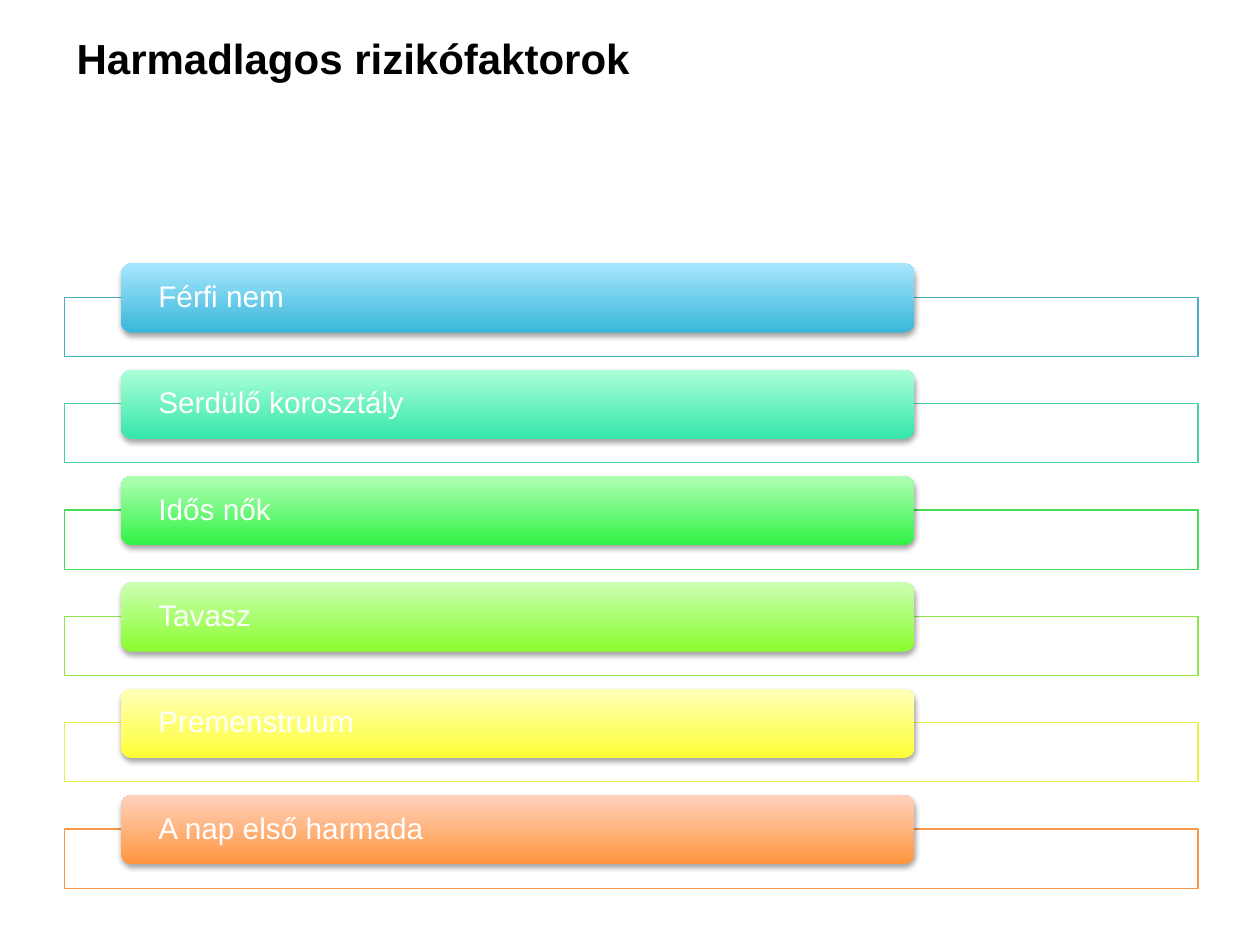
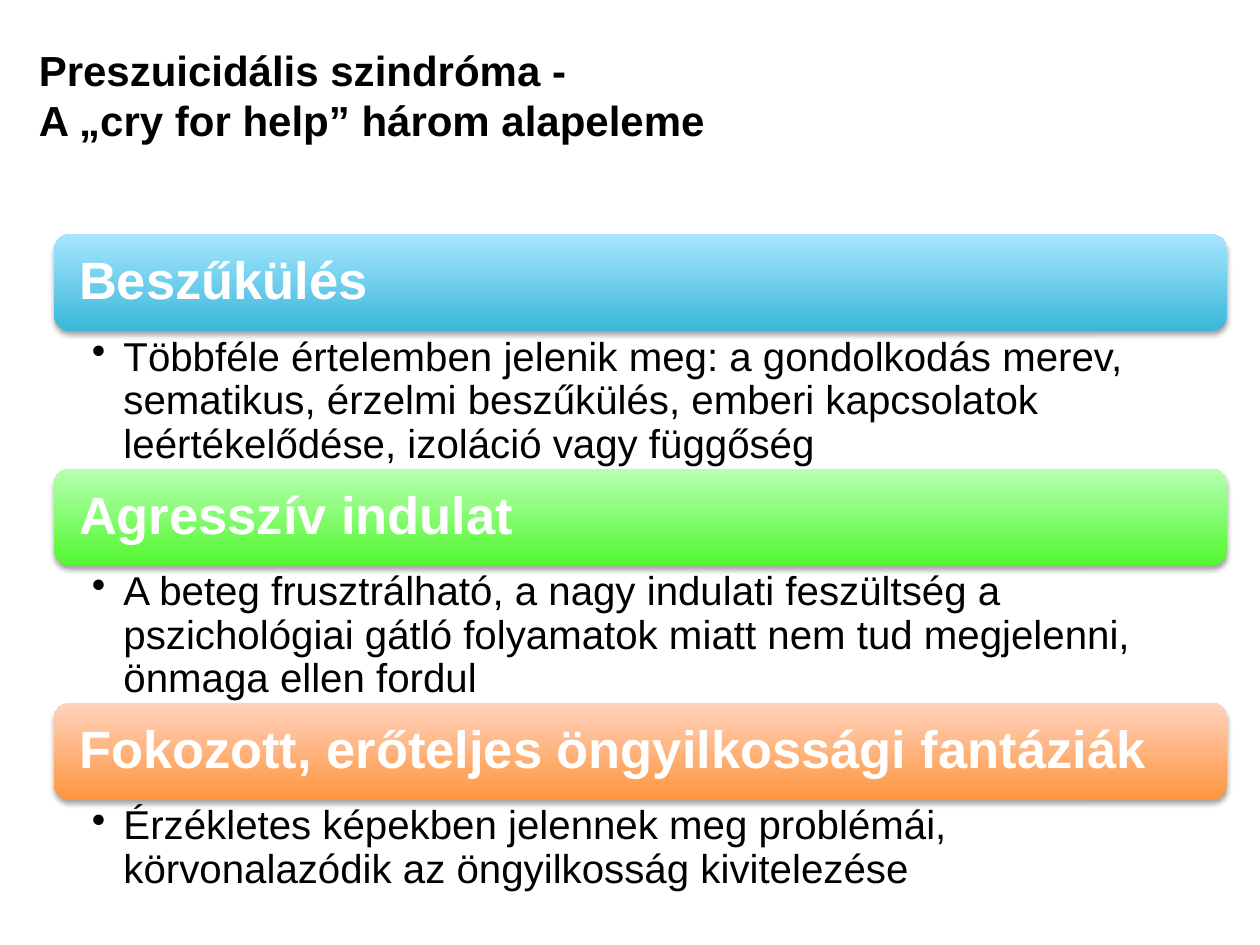
from lxml.etree import SubElement
from pptx import Presentation
from pptx.dml.color import RGBColor as RGB
from pptx.enum.shapes import MSO_SHAPE as Form
from pptx.enum.text import MSO_ANCHOR as Anchor, PP_ALIGN as Align
from pptx.oxml.ns import qn
from pptx.util import Inches, Pt

WIDE, HIGH = 10, 7.5
FONT = "Arial"
HEX = {"ink": "000000", "paper": "FFFFFF"}
TONES = {
    "blue": ("39B7D8", "A7E6FF", "4BACC6"),
    "mint": ("34E6A9", "ACFFD9", "49D1A3"),
    "green": ("31F245", "B0FFB4", "47DC57"),
    "leaf": ("51F82F", "B9FFB2", "47DC57"),
    "lime": ("8AFD2E", "CCFFB4", "8DE646"),
    "yellow": ("FEFF35", "FFFFB9", "EEEF46"),
    "orange": ("FF953E", "FFD2BD", "F79646"),
}

RISKS = {
    "title": "Harmadlagos rizikófaktorok",
    "rows": [
        ("Férfi nem", "blue"),
        ("Serdülő korosztály", "mint"),
        ("Idős nők", "green"),
        ("Tavasz", "lime"),
        ("Premenstruum", "yellow"),
        ("A nap első harmada", "orange"),
    ],
}
SIGNS = {
    "title": "Preszuicidális szindróma -\nA „cry for help” három alapeleme",
    "rows": [
        ("Beszűkülés", "blue",
         "Többféle értelemben jelenik meg: a gondolkodás merev, sematikus, "
         "érzelmi beszűkülés, emberi kapcsolatok leértékelődése, izoláció "
         "vagy függőség", 1.09),
        ("Agresszív indulat", "leaf",
         "A beteg frusztrálható, a nagy indulati feszültség a pszichológiai "
         "gátló folyamatok miatt nem tud megjelenni, önmaga ellen fordul",
         1.09),
        ("Fokozott, erőteljes öngyilkossági fantáziák", "orange",
         "Érzékletes képekben jelennek meg problémái, körvonalazódik az "
         "öngyilkosság kivitelezése", 0.75),
    ],
}


def write(shape, text, size, color="ink", bold=False, anchor=Anchor.TOP,
          pad=(0.1, 0.05, 0.1, 0.05), lead=0.9, bullet=False):
    frame = shape.text_frame
    frame.word_wrap = True
    frame.vertical_anchor = anchor
    (frame.margin_left, frame.margin_top,
     frame.margin_right, frame.margin_bottom) = map(Inches, pad)
    para = frame.paragraphs[0]
    para.text = text
    para.alignment = Align.LEFT
    para.line_spacing = lead
    if bullet:
        para.level = 1
        props = para._p.get_or_add_pPr()
        props.set("marL", str(Inches(0.25)))
        props.set("indent", str(Inches(-0.25)))
        SubElement(props, qn("a:buChar"), char="•")
    font = para.font
    font.name, font.size, font.bold = FONT, Pt(size), bold
    font.color.rgb = RGB.from_string(HEX[color])


def note(slide, box, text, size, **style):
    write(slide.shapes.add_textbox(*map(Inches, box)), text, size, **style)


def block(slide, form, box):
    shape = slide.shapes.add_shape(form, *map(Inches, box))
    shape.shadow.inherit = False
    return shape


def bar(slide, box, tone, text, size, **style):
    shape = block(slide, Form.ROUNDED_RECTANGLE, box)
    shape.fill.gradient()
    shape.fill.gradient_angle = 90
    for stop, shade in zip(shape.fill.gradient_stops, TONES[tone]):
        stop.color.rgb = RGB.from_string(shade)
    shape.line.fill.background()
    glow = SubElement(shape._element.spPr.find(qn("a:effectLst")),
                      qn("a:outerShdw"), blurRad=str(Pt(3.1)),
                      dist=str(Pt(1.8)), dir="5400000", rotWithShape="0")
    black = SubElement(glow, qn("a:srgbClr"), val=HEX["ink"])
    SubElement(black, qn("a:alpha"), val="35000")
    write(shape, text, size, color="paper", anchor=Anchor.MIDDLE, **style)


def tray(slide, box, tone):
    shape = block(slide, Form.RECTANGLE, box)
    shape.fill.solid()
    shape.fill.fore_color.rgb = RGB.from_string(HEX["paper"])
    paint = shape._element.spPr.find(qn("a:solidFill"))
    SubElement(paint[0], qn("a:alpha"), val="90000")
    shape.line.color.rgb = RGB.from_string(TONES[tone][2])
    shape.line.width = Pt(0.75)


def start(deck, title, left, top):
    slide = deck.slides.add_slide(deck.slide_layouts[6])
    note(slide, (left, top, 0.9 * WIDE, HIGH / 6), title, 24,
         bold=True, lead=1.0)
    return slide


def risks(deck):
    left, top, last, width = 0.51, 2.36, 6.58, 0.9 * WIDE
    slide = start(deck, RISKS["title"], left, 0.21)
    step = (last - top) / (len(RISKS["rows"]) - 1)
    for row, (text, tone) in enumerate(RISKS["rows"]):
        y = top + row * step
        tray(slide, (left, y, width, 0.47), tone)
        bar(slide, (left + width / 20, y - 0.27, 0.7 * width, 0.55), tone,
            text, 17, pad=(0.27, 0, 0.27, 0))


def signs(deck):
    left, y, width, tall = 0.43, 1.86, 9.31, 0.77
    slide = start(deck, SIGNS["title"], 0.21, 0.3)
    for head, tone, body, deep in SIGNS["rows"]:
        bar(slide, (left, y, width, tall), tone, head, 30,
            bold=True, pad=(0.16,) * 4)
        note(slide, (left, y + tall, width, deep), body, 23,
             pad=(0.3, 0.04, 0.23, 0.04), bullet=True)
        y += tall + deep


def main():
    deck = Presentation()
    deck.slide_width, deck.slide_height = Inches(WIDE), Inches(HIGH)
    risks(deck)
    signs(deck)
    deck.save("out.pptx")


if __name__ == "__main__":
    main()
